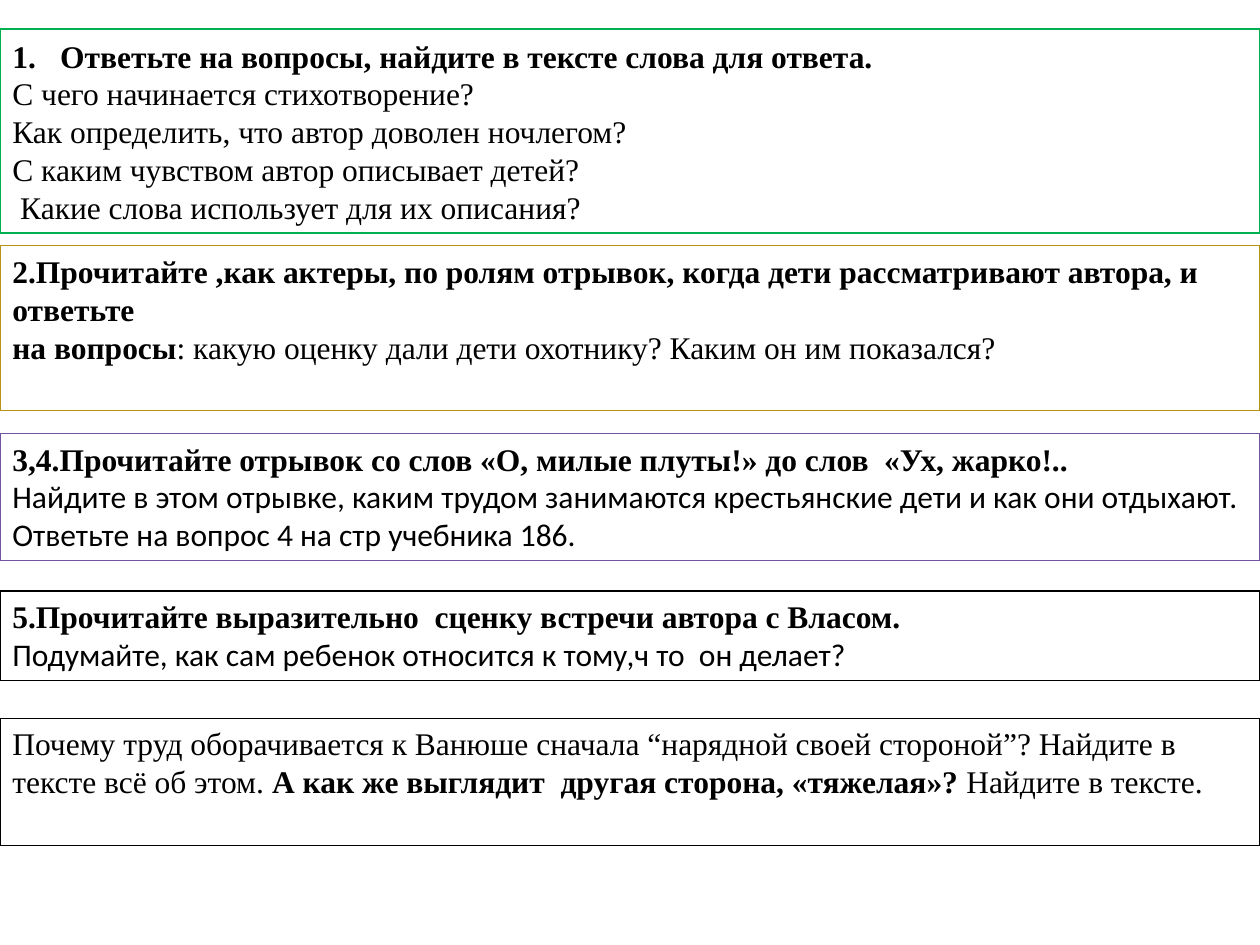
from lxml import etree
from pptx import Presentation
from pptx import util as u
from pptx.dml.color import RGBColor
from pptx.enum import shapes, text
from pptx.oxml.ns import qn

SERIF = "Times New Roman"
SANS = "Calibri"
HANGING = 0.38


def color(value):
    return RGBColor.from_string(value)


def add_text(paragraph, content, bold=False, font=SERIF, size=18, fill="000000"):
    run = paragraph.add_run()
    run.text = content
    run.font.name = font
    run.font.size = u.Pt(size)
    run.font.bold = bold
    run.font.color.rgb = color(fill)


def format_list(paragraph, numbered):
    properties = paragraph._p.get_or_add_pPr()
    properties.set("marL", str(u.Inches(HANGING)))
    properties.set("indent", str(-u.Inches(HANGING)))
    if numbered:
        etree.SubElement(properties, qn("a:buFont"), typeface="+mj-lt")
        etree.SubElement(properties, qn("a:buAutoNum"), type="arabicPeriod")


def add_task(slide, top, height, border, paragraphs, anchor=text.MSO_ANCHOR.TOP):
    shape = slide.shapes.add_shape(
        shapes.MSO_SHAPE.RECTANGLE,
        u.Inches(0), u.Inches(top), u.Inches(10), u.Inches(height),
    )
    shape.shadow.inherit = False
    shape.fill.solid()
    shape.fill.fore_color.rgb = color("FFFFFF")
    shape.line.color.rgb = color(border)
    shape.line.width = u.Pt(0.75)
    frame = shape.text_frame
    frame.word_wrap = True
    frame.vertical_anchor = anchor
    for index, runs in enumerate(paragraphs):
        paragraph = frame.add_paragraph() if index else frame.paragraphs[0]
        paragraph.alignment = text.PP_ALIGN.LEFT
        for content, style in runs:
            add_text(paragraph, content, **style)
    return frame


def add_questions(slide, top, height):
    lines = [
        "С чего начинается стихотворение?",
        "Как определить, что автор доволен ночлегом?",
        "С каким чувством автор описывает детей?",
        " Какие слова использует для их описания?",
    ]
    heading = ("Ответьте на вопросы, найдите в тексте слова для ответа.", BOLD)
    frame = add_task(
        slide, top, height, "00B050",
        [[heading]] + [[(line, PLAIN)] for line in lines],
        anchor=text.MSO_ANCHOR.MIDDLE,
    )
    format_list(frame.paragraphs[0], numbered=True)
    format_list(frame.paragraphs[1], numbered=False)


BOLD = {"bold": True}
PLAIN = {}
SANS_PLAIN = {"font": SANS}

TASKS = [
    (1.95, 1.31, "B79315", [
        [("2.Прочитайте ,как актеры, по ролям отрывок, когда дети рассматривают автора, и ответьте", BOLD)],
        [("на вопросы", BOLD),
         (": какую оценку дали дети охотнику? Каким он им показался?", PLAIN)],
    ]),
    (3.44, 1.01, "7153A1", [
        [("3,4.Прочитайте отрывок со слов «О, милые плуты!» до слов  «Ух, жарко!..", BOLD)],
        [("Найдите в этом отрывке, каким трудом занимаются крестьянские дети и как они отдыхают.", SANS_PLAIN)],
        [("Ответьте на вопрос 4 на стр учебника 186.", SANS_PLAIN)],
    ]),
    (4.69, 0.71, "000000", [
        [("5.Прочитайте выразительно  сценку встречи автора с Власом.", BOLD)],
        [("Подумайте, как сам ребенок относится к тому,ч то  он делает?", SANS_PLAIN)],
    ]),
    (5.7, 1.01, "000000", [
        [("Почему труд оборачивается к Ванюше сначала “нарядной своей стороной”? Найдите в  тексте всё об этом. ", PLAIN),
         ("А как же выглядит  другая сторона, «тяжелая»? ", BOLD),
         ("Найдите в тексте.", PLAIN)],
    ]),
]


def main():
    presentation = Presentation()
    presentation.slide_width = u.Inches(10)
    presentation.slide_height = u.Inches(7.5)
    slide = presentation.slides.add_slide(presentation.slide_layouts[6])
    add_questions(slide, 0.23, 1.62)
    for task in TASKS:
        add_task(slide, *task)
    presentation.save("out.pptx")


if __name__ == "__main__":
    main()
